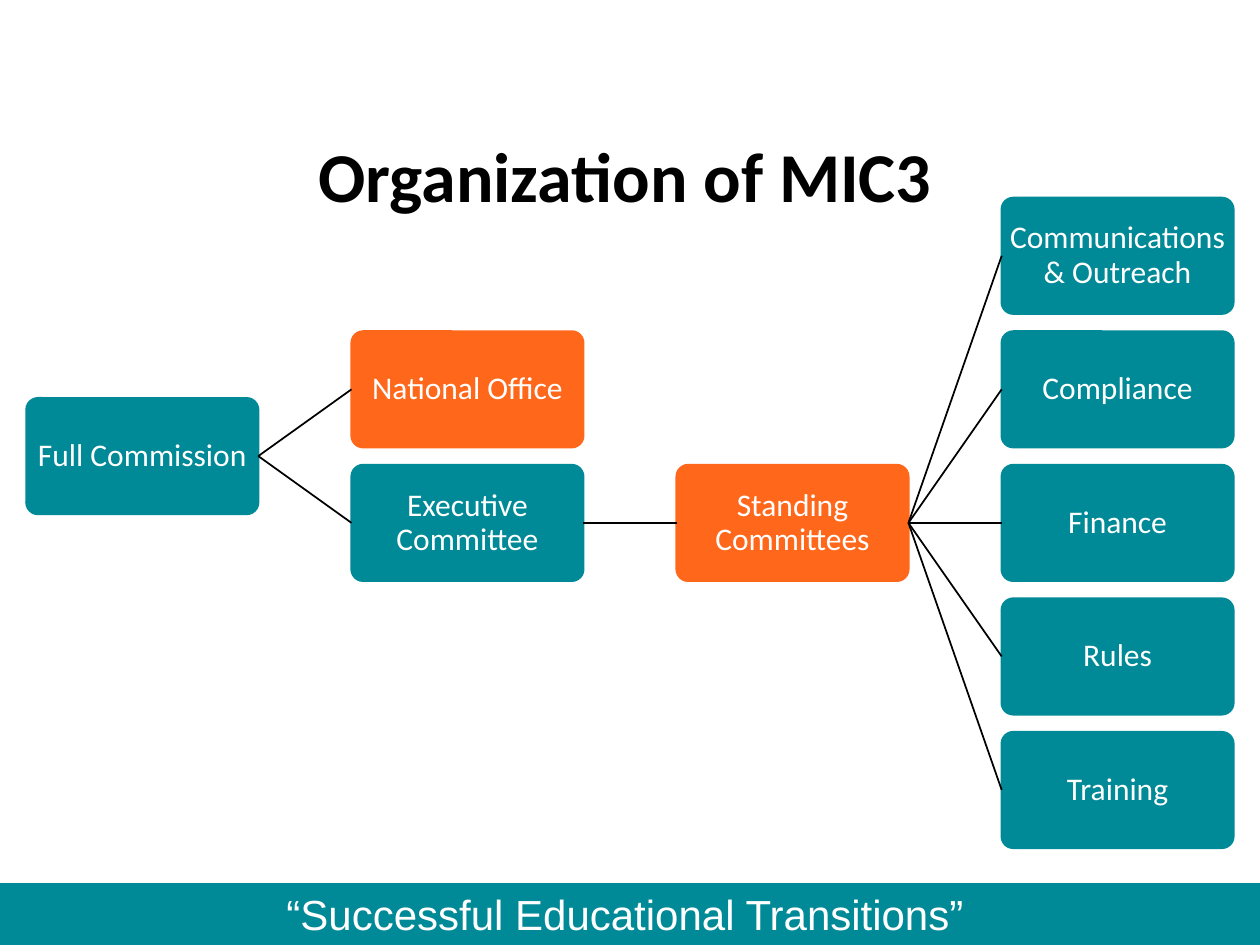
from lxml import etree
from pptx import Presentation
from pptx.dml.color import RGBColor
from pptx.enum import shapes, text
from pptx.oxml.ns import qn
from pptx.util import Inches, Pt

TEAL, ORANGE, WHITE, BLACK = "008996", "FF671B", "FFFFFF", "000000"
BOX_WIDTH, BOX_HEIGHT = 1.84, 0.92
LEFT, TOP = 0.21, 1.57
COLUMN_STEP, ROW_STEP = 2.58, 1.06

# name, column, row, colour, parent
UNITS = [
    ("Full Commission", 0, 1.5, TEAL, None),
    ("National Office", 1, 1, ORANGE, "Full Commission"),
    ("Executive Committee", 1, 2, TEAL, "Full Commission"),
    ("Standing Committees", 2, 2, ORANGE, "Executive Committee"),
    ("Communications & Outreach", 3, 0, TEAL, "Standing Committees"),
    ("Compliance", 3, 1, TEAL, "Standing Committees"),
    ("Finance", 3, 2, TEAL, "Standing Committees"),
    ("Rules", 3, 3, TEAL, "Standing Committees"),
    ("Training", 3, 4, TEAL, "Standing Committees"),
]


def paint(colour_format, colour):
    """Apply a hex colour to a colour format."""
    colour_format.rgb = RGBColor.from_string(colour)


def write(shape, words, font, size, colour, bold=False):
    """Put one centred paragraph in a shape and return it."""
    shape.text_frame.word_wrap = True
    para = shape.text_frame.paragraphs[0]
    para.text = words
    para.alignment = text.PP_ALIGN.CENTER
    para.font.name, para.font.size, para.font.bold = font, Pt(size), bold
    paint(para.font.color, colour)
    return para


def add_block(page, kind, left, top, width, height, colour):
    """Draw a filled shape with a line of the same colour."""
    block = page.shapes.add_shape(
        kind, Inches(left), Inches(top), Inches(width), Inches(height))
    block.shadow.inherit = False
    block.fill.solid()
    paint(block.fill.fore_color, colour)
    paint(block.line.color, colour)
    block.line.width = Pt(1.25)
    return block


def add_unit(page, name, column, row, colour):
    """Draw one organization box at its grid place."""
    box = add_block(page, shapes.MSO_SHAPE.ROUNDED_RECTANGLE,
                    LEFT + column * COLUMN_STEP, TOP + row * ROW_STEP,
                    BOX_WIDTH, BOX_HEIGHT, colour)
    box.adjustments[0] = 0.1
    frame = box.text_frame
    frame.margin_left = frame.margin_right = Inches(0.01)
    frame.margin_top = frame.margin_bottom = Inches(0.01)
    frame.vertical_anchor = text.MSO_ANCHOR.MIDDLE
    write(box, name, "Calibri", 18, WHITE).line_spacing = 0.9
    return box


def add_link(page, parent, child):
    """Join the right side of a parent to the left side of a child."""
    link = page.shapes.add_connector(shapes.MSO_CONNECTOR.STRAIGHT, 0, 0, 0, 0)
    link.begin_connect(parent, 3)
    link.end_connect(child, 1)
    paint(link.line.color, BLACK)
    link.line.width = Pt(1)
    etree.SubElement(link._element.spPr, qn("a:effectLst"))


def add_title(page, words):
    """Place and format the slide title."""
    title = page.shapes.title
    title.left, title.top = Inches(0.17), Inches(1)
    title.width, title.height = Inches(9.58), Inches(0.77)
    write(title, words, "Calibri", 40, BLACK, bold=True)


def add_banner(page, words):
    """Draw the bottom band with its motto."""
    band = add_block(page, shapes.MSO_SHAPE.RECTANGLE, 0, 7.01, 10.03, 0.5, TEAL)
    band.line.fill.background()
    motto = page.shapes.add_textbox(
        Inches(1.75), Inches(7), Inches(6.42), Inches(0.5))
    write(motto, words, "Arial", 24, WHITE)


def main():
    """Build the organization slide."""
    deck = Presentation()
    deck.slide_width, deck.slide_height = Inches(10), Inches(7.5)
    page = deck.slides.add_slide(deck.slide_layouts[5])
    add_banner(page, "“Successful Educational Transitions”")
    add_title(page, "Organization of MIC3")
    boxes = {}
    for name, column, row, colour, parent in UNITS:
        boxes[name] = add_unit(page, name, column, row, colour)
        if parent:
            add_link(page, boxes[parent], boxes[name])
    deck.save("out.pptx")


if __name__ == "__main__":
    main()
